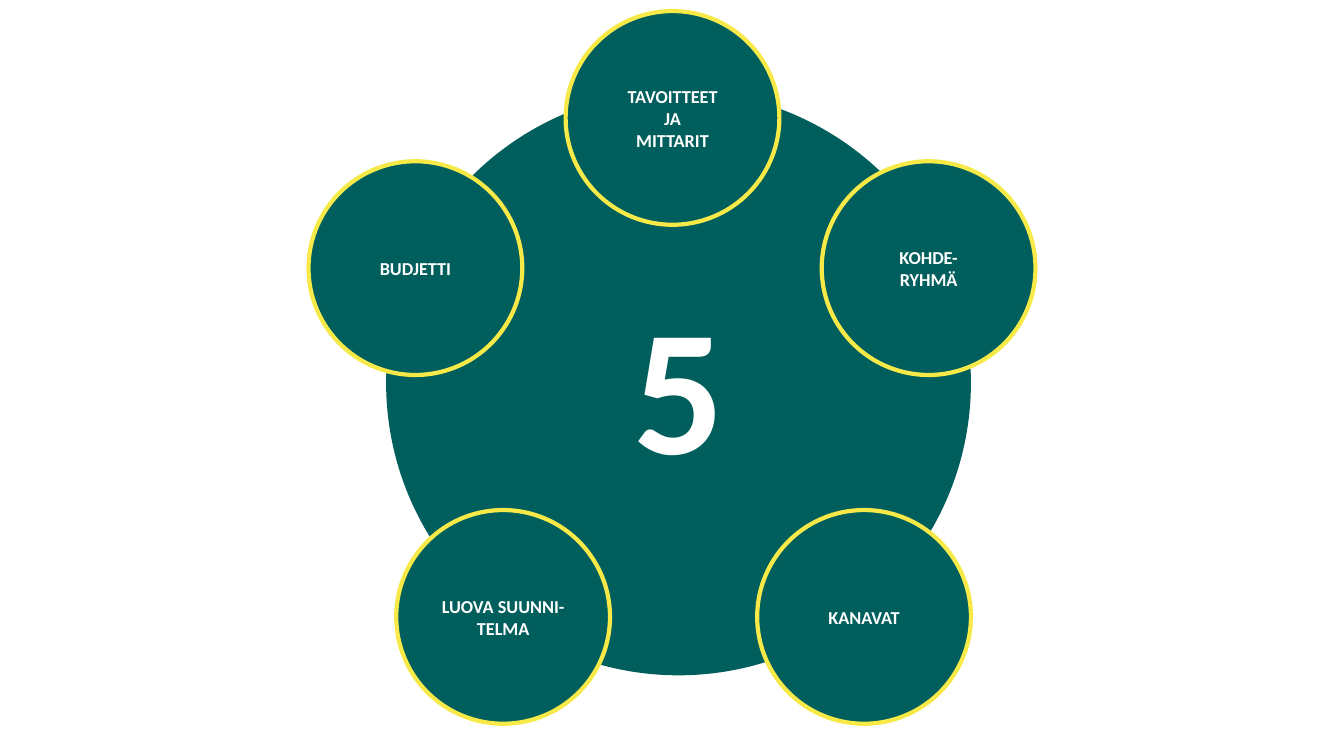
from copy import deepcopy

from pptx import Presentation
from pptx.dml.color import RGBColor
from pptx.enum.shapes import MSO_SHAPE as Shape
from pptx.enum.text import MSO_ANCHOR as Anchor, PP_ALIGN as Align
from pptx.oxml.ns import qn
from pptx.util import Inches, Pt

TEAL = RGBColor(0x00, 0x5E, 0x5D)
YELLOW = RGBColor(0xF7, 0xEA, 0x48)
WHITE = RGBColor(0xFF, 0xFF, 0xFF)

INSET = Inches(0.13)
FRAME_FORMAT = {
    "word_wrap": True,
    "vertical_anchor": Anchor.MIDDLE,
    "margin_left": INSET,
    "margin_top": INSET,
    "margin_right": INSET,
    "margin_bottom": INSET,
}
TOPIC_SIZE = 2.12
TOPIC_OFFSETS = {
    "TAVOITTEET\nJA\nMITTARIT": (1.78, -0.79),
    "KANAVAT": (3.68, 4.16),
    "KOHDE-\nRYHMÄ": (4.32, 0.7),
    "LUOVA SUUNNI-\nTELMA": (0.1, 4.16),
    "BUDJETTI": (-0.77, 0.7),
}


def apply_format(target, values):
    """Set each named attribute on the target."""
    for attribute, value in values.items():
        setattr(target, attribute, value)


def add_circle(slide, left, top, diameter, label, points, outline=None):
    """Draw a teal circle with a centred bold label."""
    circle = slide.shapes.add_shape(
        Shape.OVAL, Inches(left), Inches(top), Inches(diameter), Inches(diameter))
    circle.shadow.inherit = False
    circle.fill.solid()
    circle.fill.fore_color.rgb = TEAL
    if outline is None:
        circle.line.fill.background()
    else:
        circle.line.color.rgb = outline
        circle.line.width = Pt(3)

    apply_format(circle.text_frame, FRAME_FORMAT)
    caption = circle.text_frame.paragraphs[0]
    caption.text = label
    caption.alignment = Align.CENTER
    for run in caption.runs:
        apply_format(run.font, {"name": "Calibri", "size": Pt(points), "bold": True})
        run.font.color.rgb = WHITE
    for line_break in caption._p.findall(qn("a:br")):
        line_break.append(deepcopy(caption.runs[0].font._rPr))


def add_topic_wheel(slide, left, top, diameter):
    """Draw the numbered hub and the topics around its rim."""
    add_circle(slide, left, top, diameter, "5", 128)
    for topic, (across, down) in TOPIC_OFFSETS.items():
        add_circle(slide, left + across, top + down, TOPIC_SIZE, topic, 13, YELLOW)


def main():
    """Build and save the slide."""
    deck = Presentation()
    deck.slide_width, deck.slide_height = Inches(13.33), Inches(7.5)
    slide = deck.slides.add_slide(deck.slide_layouts[6])
    add_topic_wheel(slide, 3.83, 0.9, 5.8)
    deck.save("out.pptx")


if __name__ == "__main__":
    main()
